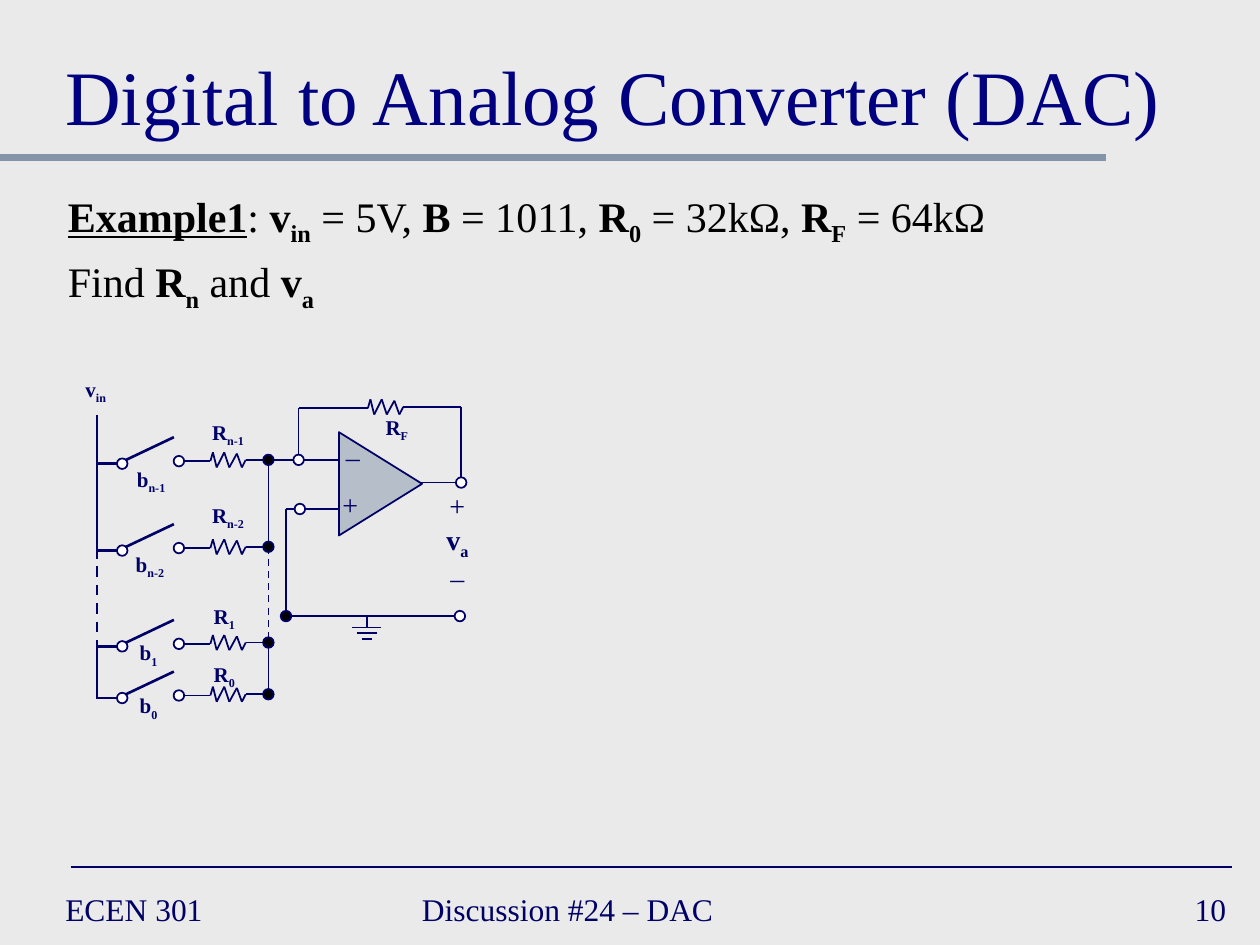
from itertools import pairwise

from lxml.etree import SubElement
from pptx import Presentation
from pptx.dml.color import RGBColor
from pptx.enum.dml import MSO_LINE
from pptx.enum.shapes import MSO_CONNECTOR, MSO_SHAPE
from pptx.enum.text import MSO_ANCHOR, PP_ALIGN
from pptx.oxml.ns import qn
from pptx.util import Inches, Pt

COLS, ROWS = 100, 75
FONT = "Times New Roman"
NAVY, TITLE, STEEL = "000066", "000080", "8495A9"
BLACK, WHITE, PAPER = "000000", "FFFFFF", "EAEAEA"
ZIGZAG = [(0, 0), (0.2, -0.7), (0.5, 0.5), (1.1, -0.7),
          (1.5, 0.5), (2.1, -0.6), (2.5, 0.5), (2.8, -0.1)]


def rgb(value):
    """Turn a hex string into a colour."""
    return RGBColor.from_string(value)


def cell(n):
    """Turn a number of grid cells into a length."""
    return Inches(n / 10)


def symbol(name, sub):
    """Return the runs of a bold symbol with its subscript."""
    return [(name, "b"), (sub, "bs")]


def add_text(s, box, paragraphs, size, color=NAVY, align=PP_ALIGN.LEFT,
             anchor=MSO_ANCHOR.TOP, wrap=False, gap=0):
    """Add a text box; each run is a text and its style letters."""
    tf = s.shapes.add_textbox(*map(cell, box)).text_frame
    tf.word_wrap, tf.vertical_anchor = wrap, anchor
    for i, runs in enumerate(paragraphs):
        p = tf.add_paragraph() if i else tf.paragraphs[0]
        p.alignment = align
        if i and gap:
            p.space_before = Pt(gap)
        for text, style in runs:
            r = p.add_run()
            r.text = text
            r.font.name, r.font.size = FONT, Pt(size)
            r.font.color.rgb = rgb(color)
            r.font.bold, r.font.underline = "b" in style, "u" in style
            if "s" in style:
                r._r.get_or_add_rPr().set("baseline", "-25000")


def add_wire(s, origin, points, width=1, color=NAVY, dash=False):
    """Join points, given relative to the origin, by straight lines."""
    x, y = origin
    for (x1, y1), (x2, y2) in pairwise(points):
        c = s.shapes.add_connector(MSO_CONNECTOR.STRAIGHT, cell(x + x1), cell(y + y1),
                                   cell(x + x2), cell(y + y2))
        c.line.color.rgb, c.line.width = rgb(color), Pt(width)
        if dash:
            c.line.dash_style = MSO_LINE.DASH
        SubElement(c._element.spPr, qn("a:effectLst"))


def add_solid(s, kind, box, fill):
    """Add a filled preset shape with a thin navy outline."""
    sp = s.shapes.add_shape(kind, *map(cell, box))
    sp.shadow.inherit = False
    sp.fill.solid()
    sp.fill.fore_color.rgb = rgb(fill)
    sp.line.color.rgb, sp.line.width = rgb(NAVY), Pt(1)
    return sp


def add_node(s, origin, x, y, fill=WHITE):
    """Add a round terminal centred on a point."""
    d = 0.84
    add_solid(s, MSO_SHAPE.OVAL, (origin[0] + x - d / 2, origin[1] + y - d / 2, d, d), fill)


def add_label(s, origin, x, top, paragraphs, size=12):
    """Add a label centred on x."""
    w, h = 5.4, 3 * len(paragraphs)
    add_text(s, (origin[0] + x - w / 2, origin[1] + top, w, h), paragraphs, size,
             align=PP_ALIGN.CENTER)


def add_resistor(s, origin, x, y):
    """Add a zigzag that starts at a point."""
    add_wire(s, origin, [(x + dx, y + dy) for dx, dy in ZIGZAG])


def add_header(s, box):
    """Add the title and the rule below it."""
    x, y, w, h = box
    add_text(s, box, [[("Digital to Analog Converter (DAC)", "")]], 44, TITLE,
             anchor=MSO_ANCHOR.BOTTOM, wrap=True)
    add_wire(s, (0, y + h), [(0, 0.8), (87.8, 0.8)], 4, STEEL)


def add_problem(s, box):
    """Add the wording of the example."""
    given = [("Example1", "bu"), (": ", ""), *symbol("v", "in"), (" = 5V, ", ""),
             ("B", "b"), (" = 1011, ", ""), *symbol("R", "0"), (" = 32kΩ, ", ""),
             *symbol("R", "F"), (" = 64kΩ", "")]
    find = [("Find ", ""), *symbol("R", "n"), (" and ", ""), *symbol("v", "a")]
    add_text(s, box, [given, find], 24, BLACK, wrap=True, gap=4.8)


def add_bit(s, origin, y, sub, r_x, r_top, b_x, b_top):
    """Add one switch and its resistor, from the input bus to the summing bus."""
    add_wire(s, origin, [(1.9, y + 0.2), (3.9, y + 0.2)], 1.5)
    add_wire(s, origin, [(4.2, y - 0.1), (8, y - 1.9)], 1.5)
    add_wire(s, origin, [(8.4, y), (10.9, y)])
    add_resistor(s, origin, 10.9, y)
    add_wire(s, origin, [(13.7, y - 0.1), (15.5, y - 0.1)])
    add_node(s, origin, 3.9, y + 0.2)
    add_node(s, origin, 8.4, y)
    add_node(s, origin, 15.5, y - 0.1, BLACK)
    add_label(s, origin, r_x, r_top, [symbol("R", sub)])
    add_label(s, origin, b_x, b_top, [symbol("b", sub)])


def add_bus(s, origin, x, ys, width):
    """Add an upright bus whose middle stretch is dashed."""
    for (y1, y2), dash in zip(pairwise(ys), (False, True, False)):
        add_wire(s, origin, [(x, y1), (x, y2)], width, dash=dash)


def add_ladder(s, origin):
    """Add the switched inputs and the two buses."""
    add_bus(s, origin, 1.9, (3.9, 14.5, 22.3, 26.5), 1.5)
    add_bus(s, origin, 15.5, (7.5, 14.4, 22.1, 26.2), 1)
    add_label(s, origin, 1.8, 0.4, [symbol("v", "in")])
    for bit in ((7.6, "n-1", 12.3, 3.8, 6.2, 7.5), (14.5, "n-2", 12.3, 10.4, 6.1, 14.3),
                (22.1, "1", 12, 18.4, 6, 21.3), (26.2, "0", 12, 23, 6, 25.5)):
        add_bit(s, origin, *bit)


def add_amplifier(s, origin):
    """Add the op-amp with its feedback, output and ground."""
    x, y = origin
    amp = add_solid(s, MSO_SHAPE.ISOSCELES_TRIANGLE, (x + 20.3, y + 6.1, 8.2, 6.6), STEEL)
    amp.rotation = 90
    tint = amp._element.spPr.find(qn("a:solidFill"))[0]
    SubElement(tint, qn("a:alpha")).set("val", "50000")
    for points in ([(15.5, 7.5), (21.1, 7.5)],
                   [(21.1, 11.4), (16.9, 11.4), (16.9, 19.9), (30.7, 19.9)],
                   [(27.6, 9.3), (30.8, 9.3), (30.8, 3.3), (26.2, 3.3)],
                   [(17.9, 7.5), (17.9, 3.4), (23.4, 3.4)],
                   [(23.3, 19.9), (23.3, 20.8)]):
        add_wire(s, origin, points)
    for half, bar_y in ((1.15, 20.8), (0.8, 21.25), (0.4, 21.7)):
        add_wire(s, origin, [(23.3 - half, bar_y), (23.3 + half, bar_y)])
    add_resistor(s, origin, 23.4, 3.4)
    for point in ((17.9, 7.5), (18, 11.4), (30.8, 9.3), (30.7, 19.9)):
        add_node(s, origin, *point)
    add_node(s, origin, 16.9, 19.9, BLACK)
    add_label(s, origin, 25.7, 3.4, [symbol("R", "F")])
    add_label(s, origin, 22.2, 5.4, [[("–", "")]], 16)
    add_label(s, origin, 22, 9.2, [[("+", "")]], 16)
    add_label(s, origin, 30.5, 9.3, [[("+", "")], symbol("v", "a"), [("–", "")]], 16)


def add_footer(s, box):
    """Add the rule, the course, the topic and the page number."""
    x, y, w, h = box
    add_wire(s, (x, y), [(1.4, -1.2), (93.6, -1.2)])
    for text, left, width, align in (("ECEN 301", 0, 21.7, PP_ALIGN.LEFT),
                                     ("Discussion #24 – DAC", 28.3, 38.3, PP_ALIGN.LEFT),
                                     ("10", w - 20.8, 20.8, PP_ALIGN.RIGHT)):
        add_text(s, (x + left, y, width, h), [[(text, "")]], 18, align=align,
                 anchor=MSO_ANCHOR.MIDDLE, wrap=True)


def main():
    """Build the slide and save it."""
    prs = Presentation()
    prs.slide_width, prs.slide_height = cell(COLS), cell(ROWS)
    s = prs.slides.add_slide(prs.slide_layouts[6])
    s.background.fill.solid()
    s.background.fill.fore_color.rgb = rgb(PAPER)
    circuit = (5.8, 29)
    add_header(s, (4.2, 1.7, 91.7, 10))
    add_problem(s, (4.4, 14.6, 91.4, 15.4))
    add_amplifier(s, circuit)
    add_ladder(s, circuit)
    add_footer(s, (4.2, 70, 94.1, 4.2))
    prs.save("out.pptx")


if __name__ == "__main__":
    main()
